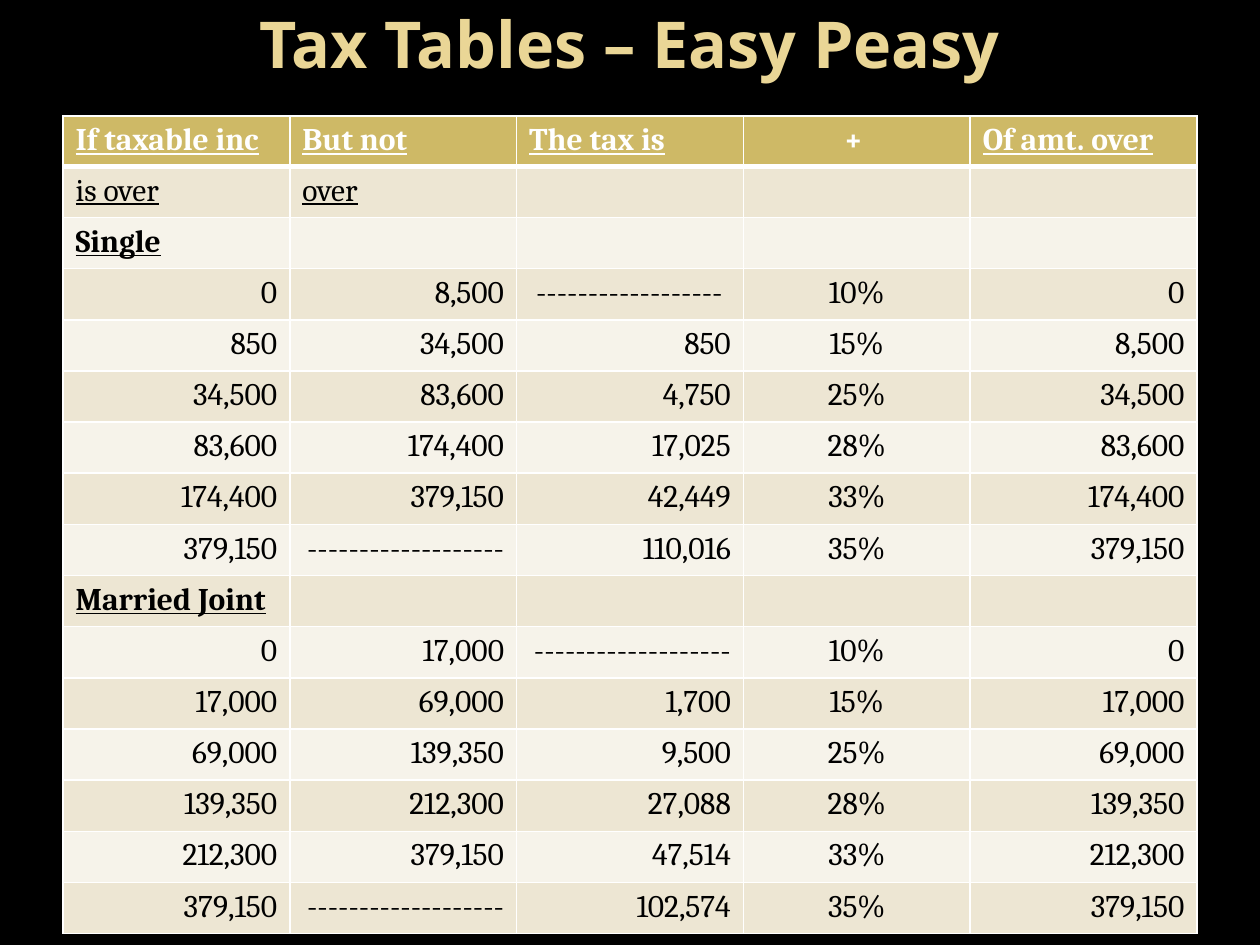
import pptx
import pptx.dml.color
import pptx.enum.text
import pptx.oxml
import pptx.oxml.ns
import pptx.util
from pptx.util import Inches

COLORS = {
    "background": "000000",
    "title": "EAD696",
    "title_end": "E7D081",
    "header": "CEB966",
    "dark_band": "EDE6D3",
    "light_band": "F6F3EA",
    "border": "FFFFFF",
    "header_text": "FFFFFF",
    "body_text": "000000",
}
ALIGN = pptx.enum.text.PP_ALIGN
DASHES = "-" * 19
HEADER = ["If taxable inc", "But not", "The tax is", "+ ", "Of amt. over"]
SUBHEADER = ["is over", "over", "", "", ""]
SINGLE = [
    ["0", "8,500", " " + "-" * 18, "10%", "0"],
    ["850", "34,500", "850", "15%", "8,500"],
    ["34,500", "83,600", "4,750", "25%", "34,500"],
    ["83,600", "174,400", "17,025", "28%", "83,600"],
    ["174,400", "379,150", "42,449", "33%", "174,400"],
    ["379,150", DASHES, "110,016", "35%", "379,150"],
]
MARRIED_JOINT = [
    ["0", "17,000", DASHES, "10%", "0"],
    ["17,000", "69,000", "1,700", "15%", "17,000"],
    ["69,000", "139,350", "9,500", "25%", "69,000"],
    ["139,350", "212,300", "27,088", "28%", "139,350"],
    ["212,300", "379,150", "47,514", "33%", "212,300"],
    ["379,150", DASHES, "102,574", "35%", "379,150"],
]


def rgb(name):
    """Return the named colour."""
    return pptx.dml.color.RGBColor.from_string(COLORS[name])


def add_title(slide, wording):
    """Add the centred title with its gold gradient."""
    title = slide.shapes.add_textbox(Inches(0.5), 0, Inches(9), Inches(0.67))
    frame = title.text_frame
    frame.word_wrap = True
    frame.vertical_anchor = pptx.enum.text.MSO_ANCHOR.MIDDLE
    frame.paragraphs[0].alignment = ALIGN.CENTER
    run = frame.paragraphs[0].add_run()
    run.text = wording
    run.font.name = "Open Sans"
    run.font.size = pptx.util.Pt(36.9)
    run.font.bold = True
    run.font.fill.gradient()
    run.font.fill.gradient_angle = 280
    stops = run.font.fill.gradient_stops
    for stop, color, position in zip(stops, ("title", "title_end"), (0.73, 1)):
        stop.color.rgb = rgb(color)
        stop.position = position


def set_borders(cell, top=1, bottom=1):
    """Draw the four borders of a cell, with widths in points."""
    properties = cell._tc.get_or_add_tcPr()
    for side, width in (("L", 1), ("R", 1), ("T", top), ("B", bottom)):
        properties.append(pptx.oxml.parse_xml(
            f'<a:ln{side} {pptx.oxml.ns.nsdecls("a")} w="{pptx.util.Pt(width)}">'
            f'<a:solidFill><a:srgbClr val="{COLORS["border"]}"/></a:solidFill>'
            f'</a:ln{side}>'))


def write_cell(cell, wording, color, align, bold, underline):
    """Write one run of table text."""
    paragraph = cell.text_frame.paragraphs[0]
    paragraph.alignment = align
    run = paragraph.add_run()
    run.text = wording
    run.font.name = "Cambria"
    run.font.size = pptx.util.Pt(18)
    run.font.bold = bold
    run.font.underline = underline
    run.font.color.rgb = rgb(color)


def bracket_align(column, wording):
    """Centre rates, right-align amounts and keep a spaced dash line left."""
    if column == 3:
        return ALIGN.CENTER
    return ALIGN.LEFT if wording.startswith(" ") else ALIGN.RIGHT


def add_tax_table(slide):
    """Add the tax brackets for both filing statuses."""
    sections = [["Single"] + [""] * 4, *SINGLE,
                ["Married Joint"] + [""] * 4, *MARRIED_JOINT]
    rows = [HEADER, SUBHEADER, *sections]
    table = slide.shapes.add_table(
        len(rows), len(HEADER), Inches(0.5), Inches(0.92), Inches(9), Inches(6.48)).table
    table.rows[0].height = Inches(0.39)
    for number in range(1, len(rows)):
        table.rows[number].height = Inches((6.48 - 0.39) / (len(rows) - 1))
    for number, row in enumerate(rows):
        is_header = number == 0
        is_status = row[0] in ("Single", "Married Joint")
        is_label = number < 2 or is_status
        band = "header" if is_header else "dark_band" if number % 2 else "light_band"
        for column, wording in enumerate(row):
            cell = table.cell(number, column)
            set_borders(cell, 3 if number == 1 else 1, 3 if is_header else 1)
            cell.fill.solid()
            cell.fill.fore_color.rgb = rgb(band)
            if wording:
                align = (ALIGN.LEFT if is_label and column != 3
                         else bracket_align(column, wording))
                write_cell(cell, wording, "header_text" if is_header else "body_text",
                           align, is_header or is_status, is_label and column != 3)


def main():
    """Build the tax table slide."""
    deck = pptx.Presentation()
    deck.slide_width, deck.slide_height = Inches(10), Inches(7.5)
    slide = deck.slides.add_slide(deck.slide_layouts[6])
    slide.background.fill.solid()
    slide.background.fill.fore_color.rgb = rgb("background")
    add_title(slide, "Tax Tables – Easy Peasy")
    add_tax_table(slide)
    deck.save("out.pptx")


if __name__ == "__main__":
    main()
